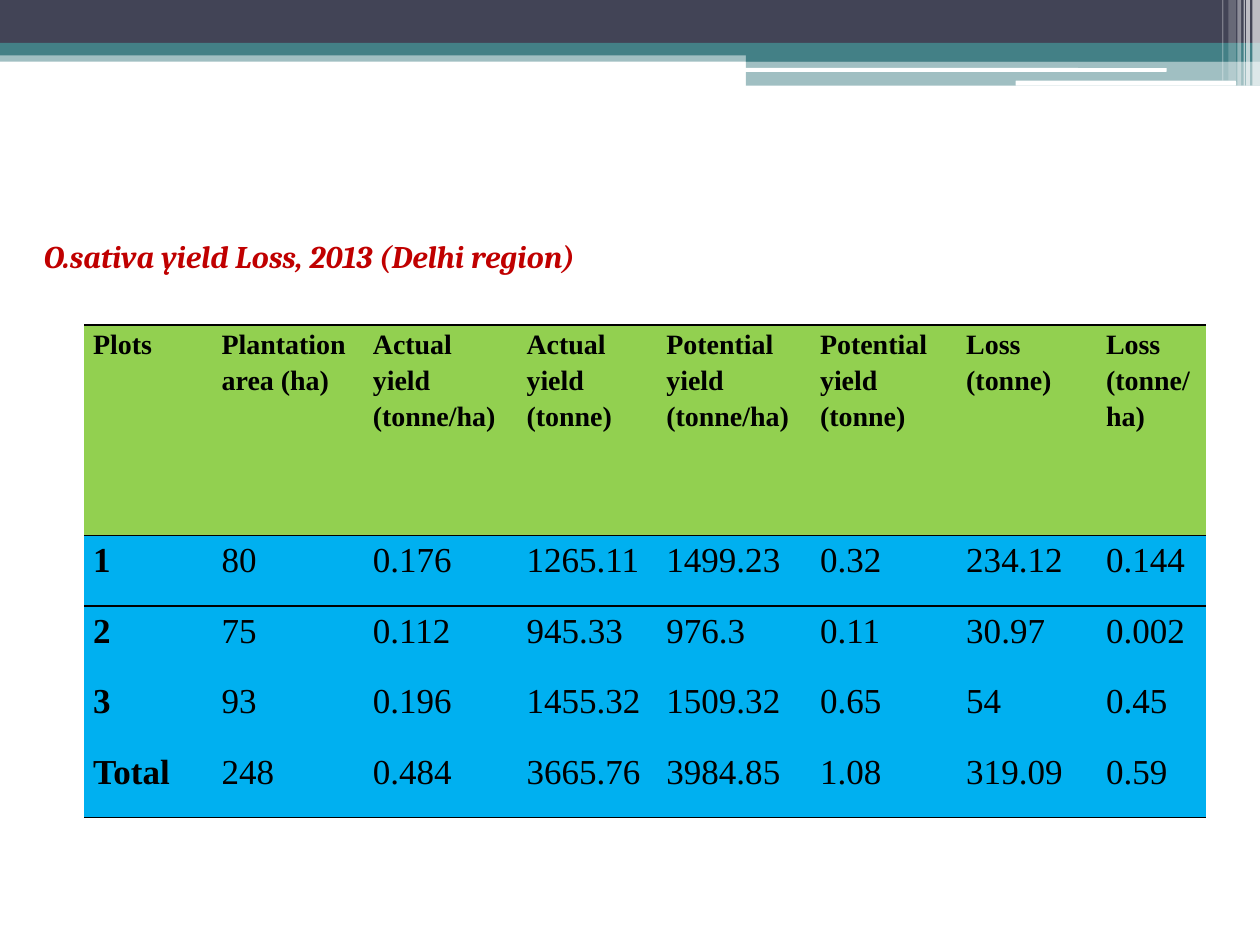
from dataclasses import dataclass

from lxml import etree
from pptx import Presentation
from pptx import util as u
from pptx.dml import color
from pptx.enum import shapes
from pptx.oxml import ns


@dataclass(frozen=True)
class Theme:
    navy: str = "424456"
    teal: str = "438086"
    white: str = "FFFFFF"
    black: str = "000000"
    red: str = "C00000"
    green: str = "92D050"
    blue: str = "00B0F0"
    title_font: str = "Cambria"
    table_font: str = "Times New Roman"
    title_size: int = 18
    header_size: int = 16
    body_size: int = 20


THEME = Theme()
NO_STYLE_NO_GRID = "{2D5ABB26-0587-4C30-8999-92F81FD0307C}"
RECTANGLE = shapes.MSO_SHAPE.RECTANGLE
ROUNDED = shapes.MSO_SHAPE.ROUNDED_RECTANGLE

# Banner parts: left, top, width, height, colour, opacity in percent, preset
BANNER = [
    (0, 0.4, 10, 0.09, THEME.teal, 50, RECTANGLE),
    (0, 0, 10, 0.34, THEME.navy, 100, RECTANGLE),
    (0, 0.34, 10, 0.1, THEME.teal, 100, RECTANGLE),
    (5.92, 0.39, 4.08, 0.1, THEME.teal, 100, RECTANGLE),
    (5.92, 0.48, 4.08, 0.2, THEME.teal, 50, RECTANGLE),
    (5.91, 0.54, 3.35, 0.03, THEME.white, 100, ROUNDED),
    (8.06, 0.64, 1.75, 0.04, THEME.white, 100, ROUNDED),
]

# Stripes in the top right corner: left, width, height, opacity in percent
STRIPES = [
    (9.94, 0.06, 0.68, 65),
    (9.89, 0.03, 0.68, 65),
    (9.87, 0.01, 0.68, 60),
    (9.82, 0.03, 0.68, 40),
    (9.75, 0.06, 0.64, 20),
    (9.7, 0.01, 0.64, 30),
]

YIELD_ROWS = [
    ["Plots", "Plantation area (ha)", "Actual yield (tonne/ha)",
     "Actual yield (tonne)", "Potential yield (tonne/ha)",
     "Potential yield (tonne)", "Loss (tonne)", "Loss (tonne/ha)"],
    ["1", "80", "0.176", "1265.11", "1499.23", "0.32", "234.12", "0.144"],
    ["2", "75", "0.112", "945.33", "976.3", "0.11", "30.97", "0.002"],
    ["3", "93", "0.196", "1455.32", "1509.32", "0.65", "54", "0.45"],
    ["Total", "248", "0.484", "3665.76", "3984.85", "1.08", "319.09", "0.59"],
]
COLUMN_WIDTHS = [1.02, 1.2, 1.22, 1.11, 1.22, 1.16, 1.11, 0.86]
HEADER_HEIGHT, BODY_HEIGHT = 1.67, 0.56


def rgb(value):
    return color.RGBColor.from_string(value)


def write_text(frame, content, *, font, size, colour, bold=False,
               italic=False, line_spacing=None):
    paragraph = frame.paragraphs[0]
    paragraph.line_spacing = line_spacing
    run = paragraph.add_run()
    run.text = content
    run.font.name = font
    run.font.size = u.Pt(size)
    run.font.color.rgb = rgb(colour)
    run.font.bold = bold
    run.font.italic = italic


def add_bar(slide, left, top, width, height, colour, opacity, preset=RECTANGLE):
    shape = slide.shapes.add_shape(
        preset, u.Inches(left), u.Inches(top), u.Inches(width), u.Inches(height))
    shape.shadow.inherit = False
    shape.line.fill.background()
    shape.fill.solid()
    shape.fill.fore_color.rgb = rgb(colour)
    if opacity < 100:
        fill_colour = shape.fill._xPr.find(".//" + ns.qn("a:srgbClr"))
        etree.SubElement(fill_colour, ns.qn("a:alpha"), val=str(opacity * 1000))


def add_border(cell, side):
    line = etree.SubElement(cell._tc.get_or_add_tcPr(), ns.qn("a:ln" + side),
                            w=str(u.Pt(1)))
    fill = etree.SubElement(line, ns.qn("a:solidFill"))
    etree.SubElement(fill, ns.qn("a:srgbClr"), val=THEME.black)


def format_cell(cell, content, *, fill, borders, size, bold):
    cell.margin_left = cell.margin_right = u.Inches(0.07)
    cell.margin_top = cell.margin_bottom = 0
    for side in borders:
        add_border(cell, side)
    cell.fill.solid()
    cell.fill.fore_color.rgb = rgb(fill)
    write_text(cell.text_frame, content, font=THEME.table_font, size=size,
               colour=THEME.black, bold=bold, line_spacing=1.15)


def add_yield_table(slide):
    last = len(YIELD_ROWS) - 1
    height = HEADER_HEIGHT + last * BODY_HEIGHT
    table = slide.shapes.add_table(
        len(YIELD_ROWS), len(COLUMN_WIDTHS), u.Inches(0.67), u.Inches(2.58),
        u.Inches(sum(COLUMN_WIDTHS)), u.Inches(height)).table
    table.horz_banding = False
    table._tbl.tblPr.find(ns.qn("a:tableStyleId")).text = NO_STYLE_NO_GRID
    for column, width in zip(table.columns, COLUMN_WIDTHS):
        column.width = u.Inches(width)

    # Rules run above and below the header and under the total
    borders = {0: "TB", 1: "T", last: "B"}
    for i, values in enumerate(YIELD_ROWS):
        header = i == 0
        table.rows[i].height = u.Inches(HEADER_HEIGHT if header else BODY_HEIGHT)
        for j, value in enumerate(values):
            format_cell(table.cell(i, j), value,
                        fill=THEME.green if header else THEME.blue,
                        borders=borders.get(i, ""),
                        size=THEME.header_size if header else THEME.body_size,
                        bold=header or j == 0)


def add_title(slide):
    box = slide.shapes.add_textbox(
        u.Inches(0.25), u.Inches(1.83), u.Inches(9.75), u.Inches(0.4))
    box.text_frame.word_wrap = True
    write_text(box.text_frame, "O.sativa yield Loss, 2013 (Delhi region)",
               font=THEME.title_font, size=THEME.title_size, colour=THEME.red,
               bold=True, italic=True)


def main():
    presentation = Presentation()
    presentation.slide_width = u.Inches(10)
    presentation.slide_height = u.Inches(7.5)
    slide = presentation.slides.add_slide(presentation.slide_layouts[6])

    # Banner and corner stripes
    for bar in BANNER:
        add_bar(slide, *bar)
    for left, width, height, opacity in STRIPES:
        add_bar(slide, left, 0, width, height, THEME.white, opacity)

    # Content
    add_yield_table(slide)
    add_title(slide)
    presentation.save("out.pptx")


if __name__ == "__main__":
    main()
